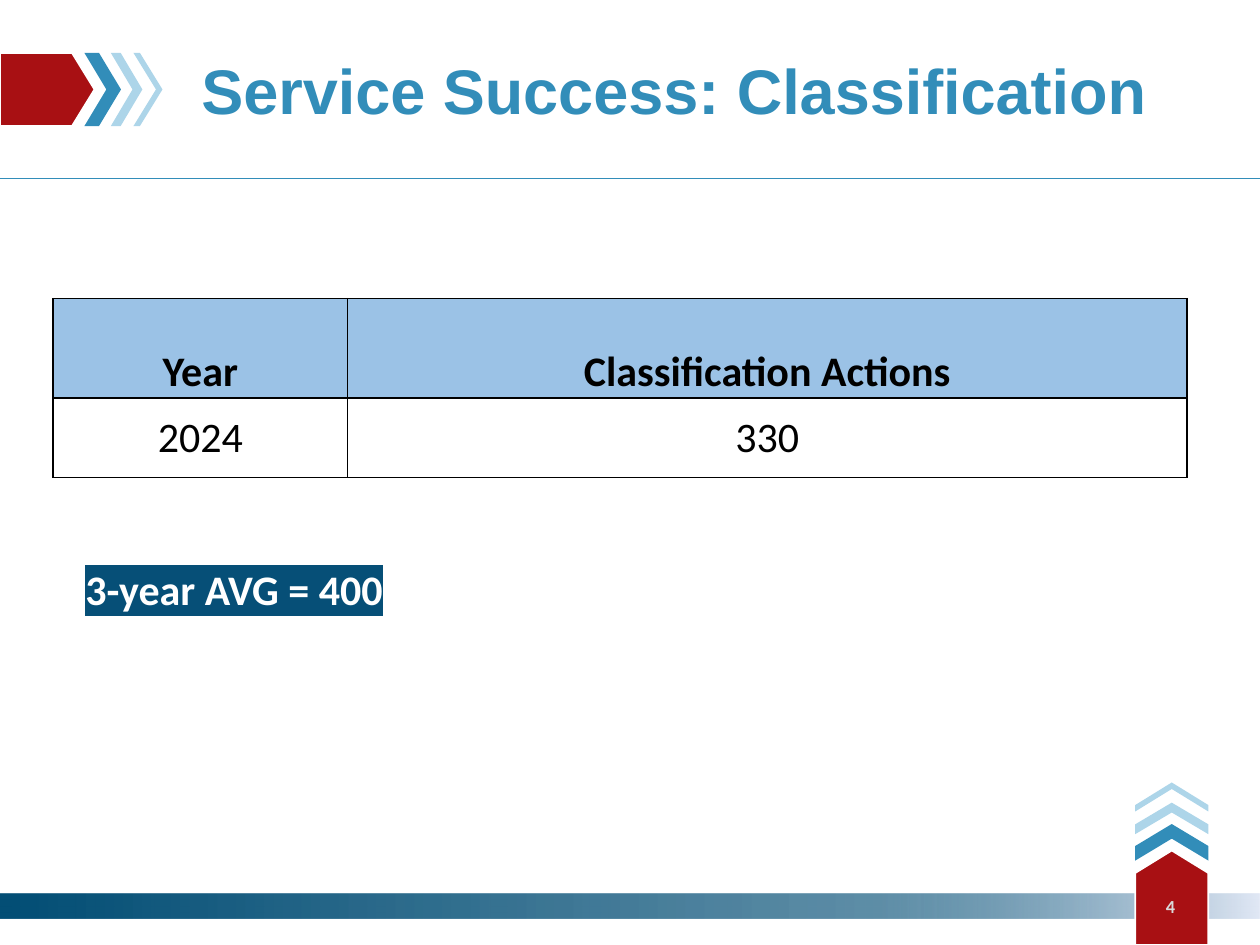
from dataclasses import dataclass

from lxml import etree
from pptx import Presentation
from pptx.dml.color import RGBColor
from pptx.enum.shapes import MSO_CONNECTOR, MSO_SHAPE
from pptx.enum.text import MSO_ANCHOR, PP_ALIGN
from pptx.oxml import parse_xml
from pptx.oxml.ns import qn
from pptx.util import Inches, Pt

PENTAGON, CHEVRON = MSO_SHAPE.PENTAGON, MSO_SHAPE.CHEVRON
LEFT, CENTER = PP_ALIGN.LEFT, PP_ALIGN.CENTER
MIDDLE, BOTTOM = MSO_ANCHOR.MIDDLE, MSO_ANCHOR.BOTTOM
NAMESPACE = "http://schemas.openxmlformats.org/drawingml/2006/main"


@dataclass(frozen=True)
class Theme:
    navy: str = "034E75"
    highlight: str = "064F77"
    blue: str = "328DB9"
    light_blue: str = "ADD5E9"
    pale: str = "E1E8F5"
    red: str = "A81013"
    header: str = "9BC2E6"
    number: str = "D9D9D9"
    white: str = "FFFFFF"
    black: str = "000000"
    title_size: float = 36
    body_size: float = 24
    number_size: float = 10.5


theme = Theme()


def write_text(frame, text, align, color, size, name="Calibri", bold=True):
    paragraph = frame.paragraphs[0]
    paragraph.alignment = align
    run = paragraph.add_run()
    run.text = text
    font_format = {"name": name, "size": Pt(size), "bold": bold}
    for attribute, value in font_format.items():
        setattr(run.font, attribute, value)
    run.font.color.rgb = RGBColor.from_string(color)
    return run


def add_text(box, text, *style):
    shape = slide.shapes.add_textbox(*map(Inches, box))
    frame = shape.text_frame
    frame.word_wrap = True
    frame.vertical_anchor = MIDDLE
    return write_text(frame, text, *style)


presentation = Presentation()
presentation.slide_width, presentation.slide_height = Inches(10), Inches(7.5)
slide = presentation.slides.add_slide(presentation.slide_layouts[6])

# Footer bar fading to the right
bar = slide.shapes.add_shape(
    MSO_SHAPE.RECTANGLE, Inches(-0.02), Inches(7.09), Inches(10.02), Inches(0.2))
bar.shadow.inherit = False
bar.line.fill.background()
bar.fill.gradient()
bar.fill.gradient_angle = 0
stops = bar.fill._fill._gradFill.find(qn("a:gsLst"))
for stop in list(stops):
    stops.remove(stop)
for position, color, alpha in ((0, theme.navy, 100), (70, theme.navy, 63), (100, theme.pale, 100)):
    stops.append(parse_xml(
        f'<a:gs xmlns:a="{NAMESPACE}" pos="{position * 1000}"><a:srgbClr val="{color}">'
        f'<a:alpha val="{alpha * 1000}"/></a:srgbClr></a:gs>'))

# Arrow motif: pointing right at the top left, pointing up at the bottom right
arrow_height = 0.58
arrow_parts = (
    (PENTAGON, 0, 0.75, 0.307, theme.red),
    (CHEVRON, 0.67, 0.29, 0.601, theme.blue),
    (CHEVRON, 0.88, 0.25, 0.688, theme.light_blue),
    (CHEVRON, 1.06, 0.23, 0.776, theme.light_blue),
)
for rotation in (270, 0):
    for kind, offset, width, point, color in arrow_parts:
        left, top = offset, 0.42
        if rotation:
            left = 9.3 - width / 2
            top = 7.5 - offset - (width + arrow_height) / 2
        arrow = slide.shapes.add_shape(
            kind, Inches(left), Inches(top), Inches(width), Inches(arrow_height))
        arrow.rotation = rotation
        arrow.adjustments[0] = point
        arrow.shadow.inherit = False
        arrow.fill.solid()
        arrow.fill.fore_color.rgb = RGBColor.from_string(color)
        if kind == PENTAGON:
            arrow.line.color.rgb = RGBColor.from_string(theme.white)
            arrow.line.width = Pt(1)
        else:
            arrow.line.fill.background()

# Title and rule
rule = slide.shapes.add_connector(
    MSO_CONNECTOR.STRAIGHT, Inches(0), Inches(1.42), Inches(10), Inches(1.42))
rule.line.color.rgb = RGBColor.from_string(theme.blue)
rule.line.width = Pt(0.5)
etree.SubElement(rule._element.spPr, qn("a:effectLst"))
add_text((1.5, 0.08, 8, 1.25), "Service Success: Classification",
         LEFT, theme.blue, theme.title_size, "Arial")

# Table
rows = (("Year", "Classification Actions"), ("2024", "330"))
table = slide.shapes.add_table(
    2, 2, Inches(0.42), Inches(2.37), Inches(9), Inches(1.42)).table
for column, width in zip(table.columns, (2.34, 6.66)):
    column.width = Inches(width)
for row, height in zip(table.rows, (0.79, 0.63)):
    row.height = Inches(height)
for row_index, texts in enumerate(rows):
    is_header = row_index == 0
    for column_index, text in enumerate(texts):
        cell = table.cell(row_index, column_index)
        cell_format = {
            "margin_left": Inches(0.01), "margin_right": Inches(0.01),
            "margin_top": Inches(0.01), "margin_bottom": 0,
            "vertical_anchor": BOTTOM if is_header else MIDDLE,
        }
        for attribute, value in cell_format.items():
            setattr(cell, attribute, value)
        write_text(cell.text_frame, text, CENTER, theme.black, theme.body_size, bold=is_header)
        properties = cell._tc.get_or_add_tcPr()
        for side in ("lnL", "lnR", "lnT", "lnB"):
            properties.append(parse_xml(
                f'<a:{side} xmlns:a="{NAMESPACE}" w="{Pt(1)}"><a:solidFill>'
                f'<a:srgbClr val="{theme.black}"/></a:solidFill></a:{side}>'))
        if is_header:
            cell.fill.solid()
            cell.fill.fore_color.rgb = RGBColor.from_string(theme.header)
        else:
            cell.fill.background()

# Page number
add_text((9, 6.99, 0.58, 0.4), "4", CENTER, theme.number, theme.number_size)

# Highlighted average
average = add_text((0.58, 4.42, 9, 0.5), "3-year AVG = 400",
                   LEFT, theme.white, theme.body_size)
average.font._element.find(qn("a:solidFill")).addnext(parse_xml(
    f'<a:highlight xmlns:a="{NAMESPACE}"><a:srgbClr val="{theme.highlight}"/></a:highlight>'))

presentation.save("out.pptx")
